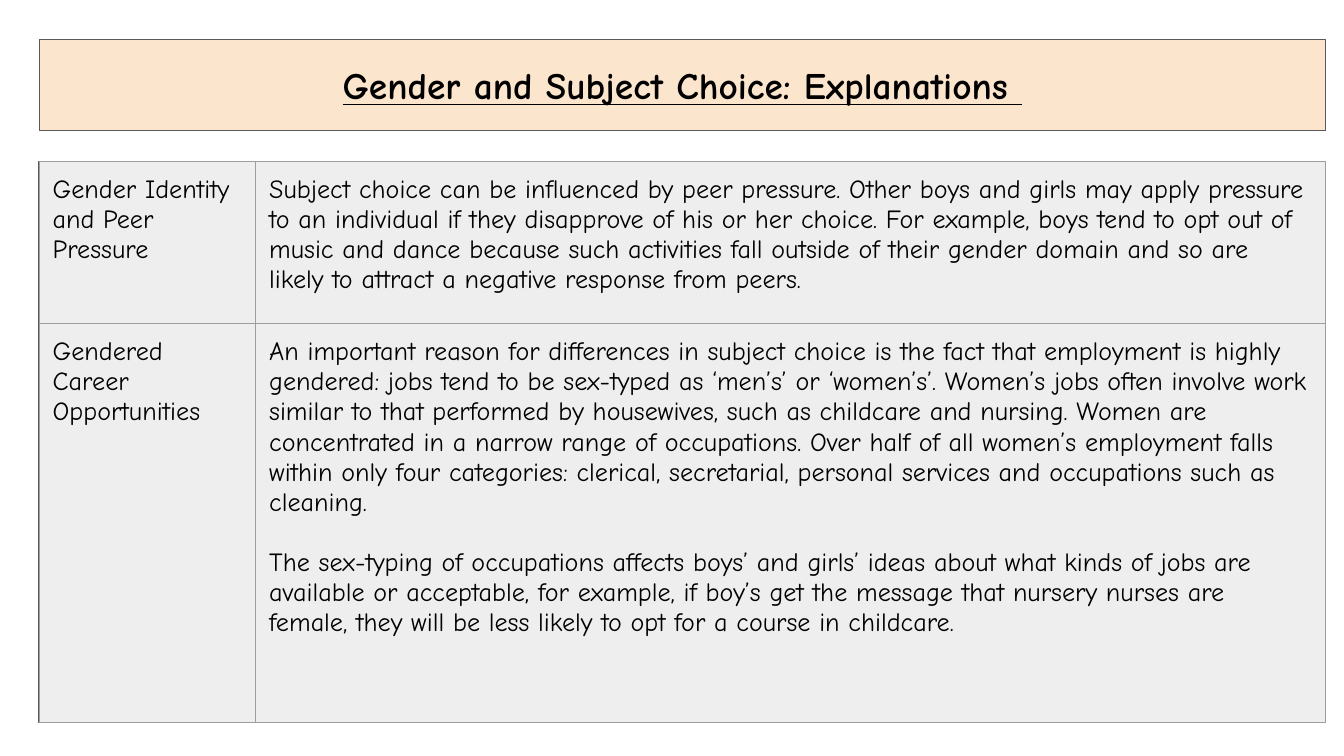
"""Build a slide with a boxed title and a two-row table of explanations."""
from dataclasses import dataclass

from lxml import etree
from pptx import Presentation, util as u
from pptx.dml.color import RGBColor
from pptx.enum import shapes, text
from pptx.oxml import ns

FONT = "Comic Neue"
INK, EDGE, GRID, PEACH, GREY = "000000", "595959", "9E9E9E", "FCE5CD", "EEEEEE"
LEFT, TOP, PAD = 21, 86.5, 7.2
COLS, ROWS = (116, 573), (87, 213.5)
WIDTH = sum(COLS)
GAP = 16.1


@dataclass
class Reason:
    name: str
    paras: tuple[str, ...]


REASONS = (
    Reason("Gender Identity and Peer Pressure", (
        "Subject choice can be influenced by peer pressure. Other boys and girls may "
        "apply pressure to an individual if they disapprove of his or her choice. For "
        "example, boys tend to opt out of music and dance because such activities fall "
        "outside of their gender domain and so are likely to attract a negative "
        "response from peers.",
    )),
    Reason("Gendered Career Opportunities", (
        "An important reason for differences in subject choice is the fact that "
        "employment is highly gendered: jobs tend to be sex-typed as ‘men’s’ or "
        "‘women’s’. Women’s jobs often involve work similar to that performed by "
        "housewives, such as childcare and nursing. Women are concentrated in a narrow "
        "range of occupations. Over half of all women’s employment falls within only "
        "four categories: clerical, secretarial, personal services and occupations "
        "such as cleaning.",
        "The sex-typing of occupations affects boys’ and girls’ ideas about what kinds "
        "of jobs are available or acceptable, for example, if boy’s get the message "
        "that nursery nurses are female, they will be less likely to opt for a course "
        "in childcare.",
    )),
)


def tint(code: str) -> RGBColor:
    return RGBColor.from_string(code)


def paint(shape, fill: str) -> None:
    shape.fill.solid()
    shape.fill.fore_color.rgb = tint(fill)
    shape.line.color.rgb = tint(EDGE)
    shape.line.width = u.Pt(0.75)


def pad(item) -> None:
    for side in ("left", "right", "top", "bottom"):
        setattr(item, f"margin_{side}", u.Pt(PAD))


def write(para, words: str, size: float, bold: bool = False) -> None:
    run = para.add_run()
    run.text = words
    font = run.font
    font.name, font.size, font.color.rgb = FONT, u.Pt(size), tint(INK)
    font.bold = font.underline = bold


def border(cell) -> None:
    props = cell._tc.get_or_add_tcPr()
    for side in "LRTB":
        line = etree.SubElement(props, ns.qn(f"a:ln{side}"), w=str(u.Pt(0.75)))
        fill = etree.SubElement(line, ns.qn("a:solidFill"))
        etree.SubElement(fill, ns.qn("a:srgbClr"), val=GRID)


def fill_cell(cell, paras: tuple[str, ...]) -> None:
    border(cell)
    cell.fill.background()
    pad(cell)
    for i, words in enumerate(paras):
        para = cell.text_frame.add_paragraph() if i else cell.text_frame.paragraphs[0]
        para.space_before = u.Pt(GAP if i else 0)
        write(para, words, 14)


def add_title(slide) -> None:
    title = slide.shapes.title
    title.left, title.top = u.Pt(LEFT), u.Pt(LEFT)
    title.width, title.height = u.Pt(WIDTH), u.Pt(49)
    paint(title, PEACH)
    frame = title.text_frame
    pad(frame)
    frame.word_wrap = True
    frame.auto_size = text.MSO_AUTO_SIZE.NONE
    frame.vertical_anchor = text.MSO_ANCHOR.MIDDLE
    para = frame.paragraphs[0]
    para.alignment = text.PP_ALIGN.CENTER
    write(para, "Gender and Subject Choice: Explanations ", 20, True)


def add_grid(slide) -> None:
    area = [u.Pt(n) for n in (LEFT, TOP, WIDTH, sum(ROWS))]
    panel = slide.shapes.add_shape(shapes.MSO_SHAPE.RECTANGLE, *area)
    panel.shadow.inherit = False
    paint(panel, GREY)
    table = slide.shapes.add_table(len(ROWS), len(COLS), *area).table
    table.first_row = table.horz_banding = False
    for col, wide in zip(table.columns, COLS):
        col.width = u.Pt(wide)
    for row, high, reason in zip(table.rows, ROWS, REASONS):
        row.height = u.Pt(high)
        fill_cell(row.cells[0], (reason.name,))
        fill_cell(row.cells[1], reason.paras)


def main() -> None:
    deck = Presentation()
    deck.slide_width, deck.slide_height = u.Pt(720), u.Pt(405)
    slide = deck.slides.add_slide(deck.slide_layouts[5])
    add_title(slide)
    add_grid(slide)
    deck.save("out.pptx")


if __name__ == "__main__":
    main()
